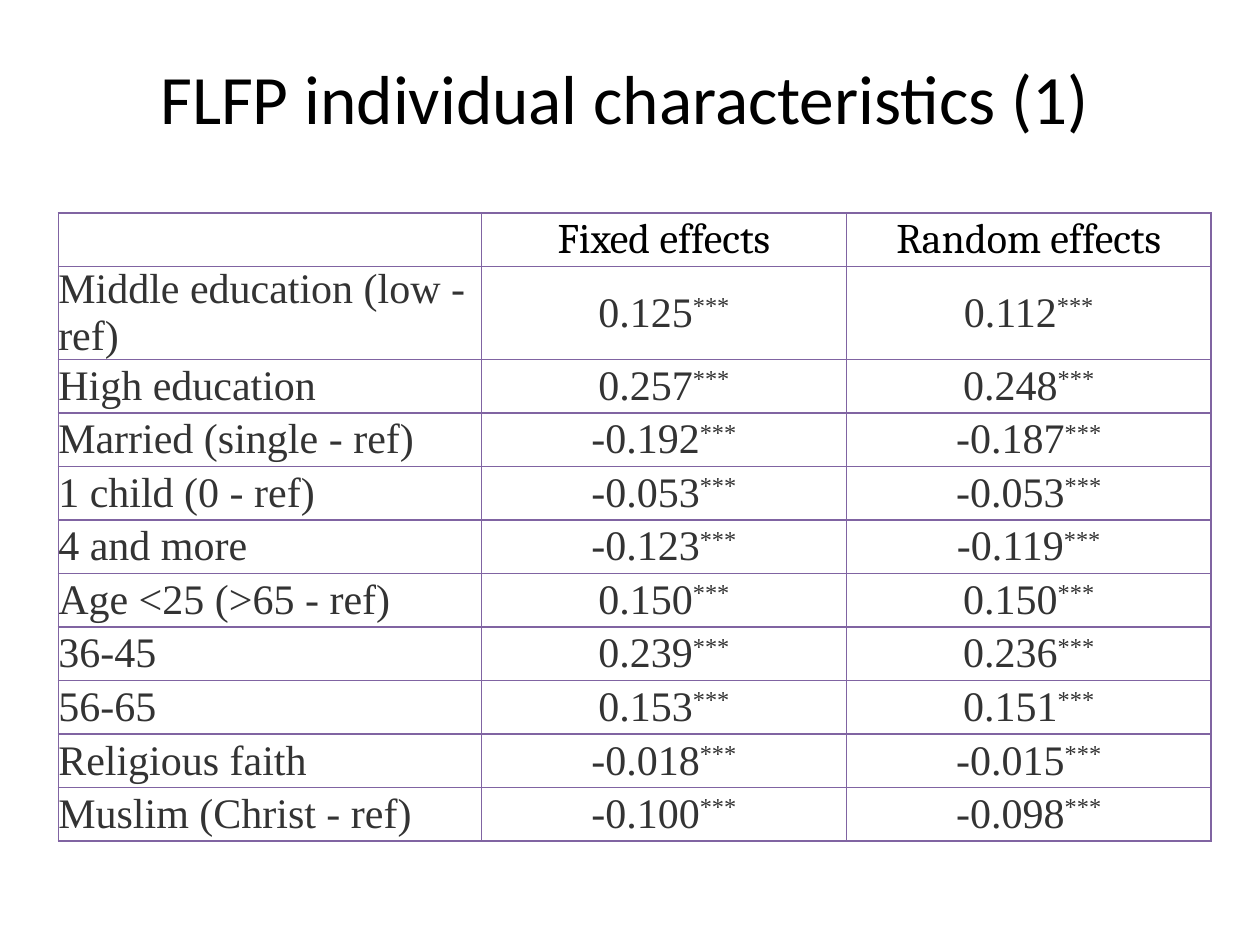
from lxml import etree
from pptx import Presentation
from pptx.dml.color import RGBColor
from pptx.enum.text import MSO_ANCHOR, PP_ALIGN
from pptx.oxml.ns import qn
from pptx.util import Pt

CENTER = PP_ALIGN.CENTER
LEFT = PP_ALIGN.LEFT
MIDDLE = MSO_ANCHOR.MIDDLE
TITLE_ONLY = 5

COLORS = {"heading": "000000", "body": "333333", "border": "8064A2"}
HEADERS = ["Fixed effects", "Random effects"]
STARS = "***"
EFFECTS = [
    ("Middle education (low - ref)", "0.125", "0.112"),
    ("High education", "0.257", "0.248"),
    ("Married (single - ref)", "-0.192", "-0.187"),
    ("1 child (0 - ref)", "-0.053", "-0.053"),
    ("4 and more", "-0.123", "-0.119"),
    ("Age <25 (>65 - ref)", "0.150", "0.150"),
    ("36-45", "0.239", "0.236"),
    ("56-65", "0.153", "0.151"),
    ("Religious faith", "-0.018", "-0.015"),
    ("Muslim (Christ - ref)", "-0.100", "-0.098"),
]


def write_text(paragraph, text, *, font, size, color, align=CENTER, superscript=False):
    paragraph.alignment = align
    run = paragraph.add_run()
    run.text = text
    run.font.name = font
    run.font.size = Pt(size)
    run.font.bold = False
    run.font.color.rgb = RGBColor.from_string(COLORS[color])
    if superscript:
        run._r.get_or_add_rPr().set("baseline", "30000")


class EffectsSlide:
    title_style = {"font": "Calibri", "size": 39.6, "color": "heading"}
    header_style = {"font": "Cambria", "size": 24, "color": "heading"}
    body_style = {"font": "Times New Roman", "size": 24, "color": "body"}
    border_width = 1

    def __init__(self, presentation):
        self.slide = presentation.slides.add_slide(presentation.slide_layouts[TITLE_ONLY])

    def add_title(self, text, left, top, width, height, bottom_inset):
        title = self.slide.shapes.title
        title.left, title.top = Pt(left), Pt(top)
        title.width, title.height = Pt(width), Pt(height)
        frame = title.text_frame
        frame.vertical_anchor = MIDDLE
        frame.margin_bottom = Pt(bottom_inset)
        write_text(frame.paragraphs[0], text, **self.title_style)

    def add_table(self, left, top, column_widths, row_height):
        row_count = len(EFFECTS) + 1
        table = self.slide.shapes.add_table(
            row_count, len(column_widths), Pt(left), Pt(top),
            Pt(sum(column_widths)), Pt(row_height * row_count),
        ).table
        table.first_row = table.horz_banding = False
        for column, width in zip(table.columns, column_widths):
            column.width = Pt(width)
        for row in table.rows:
            row.height = Pt(row_height)
        for cell in table.iter_cells():
            self.format_cell(cell)

        for column, header in enumerate(HEADERS, start=1):
            paragraph = table.cell(0, column).text_frame.paragraphs[0]
            write_text(paragraph, header, **self.header_style)
        for row, (label, *values) in enumerate(EFFECTS, start=1):
            paragraph = table.cell(row, 0).text_frame.paragraphs[0]
            write_text(paragraph, label, align=LEFT, **self.body_style)
            for column, value in enumerate(values, start=1):
                paragraph = table.cell(row, column).text_frame.paragraphs[0]
                write_text(paragraph, value, **self.body_style)
                write_text(paragraph, STARS, superscript=True, **self.body_style)

    def format_cell(self, cell):
        cell.vertical_anchor = MIDDLE
        cell.margin_left = cell.margin_right = 0
        cell.margin_top = cell.margin_bottom = 0
        cell.fill.background()
        properties = cell._tc.get_or_add_tcPr()
        for position, side in enumerate("LRTB"):
            line = etree.Element(qn(f"a:ln{side}"), w=str(Pt(self.border_width)))
            fill = etree.SubElement(line, qn("a:solidFill"))
            etree.SubElement(fill, qn("a:srgbClr"), val=COLORS["border"])
            properties.insert(position, line)


def main():
    presentation = Presentation()
    presentation.slide_width, presentation.slide_height = Pt(720), Pt(540)
    effects_slide = EffectsSlide(presentation)
    effects_slide.add_title(
        "FLFP individual characteristics (1)",
        left=33, top=21.6, width=648, height=90, bottom_inset=26,
    )
    effects_slide.add_table(
        left=33.3, top=121.7, column_widths=[241.8, 208.5, 208.5], row_height=30.6,
    )
    presentation.save("out.pptx")


if __name__ == "__main__":
    main()
